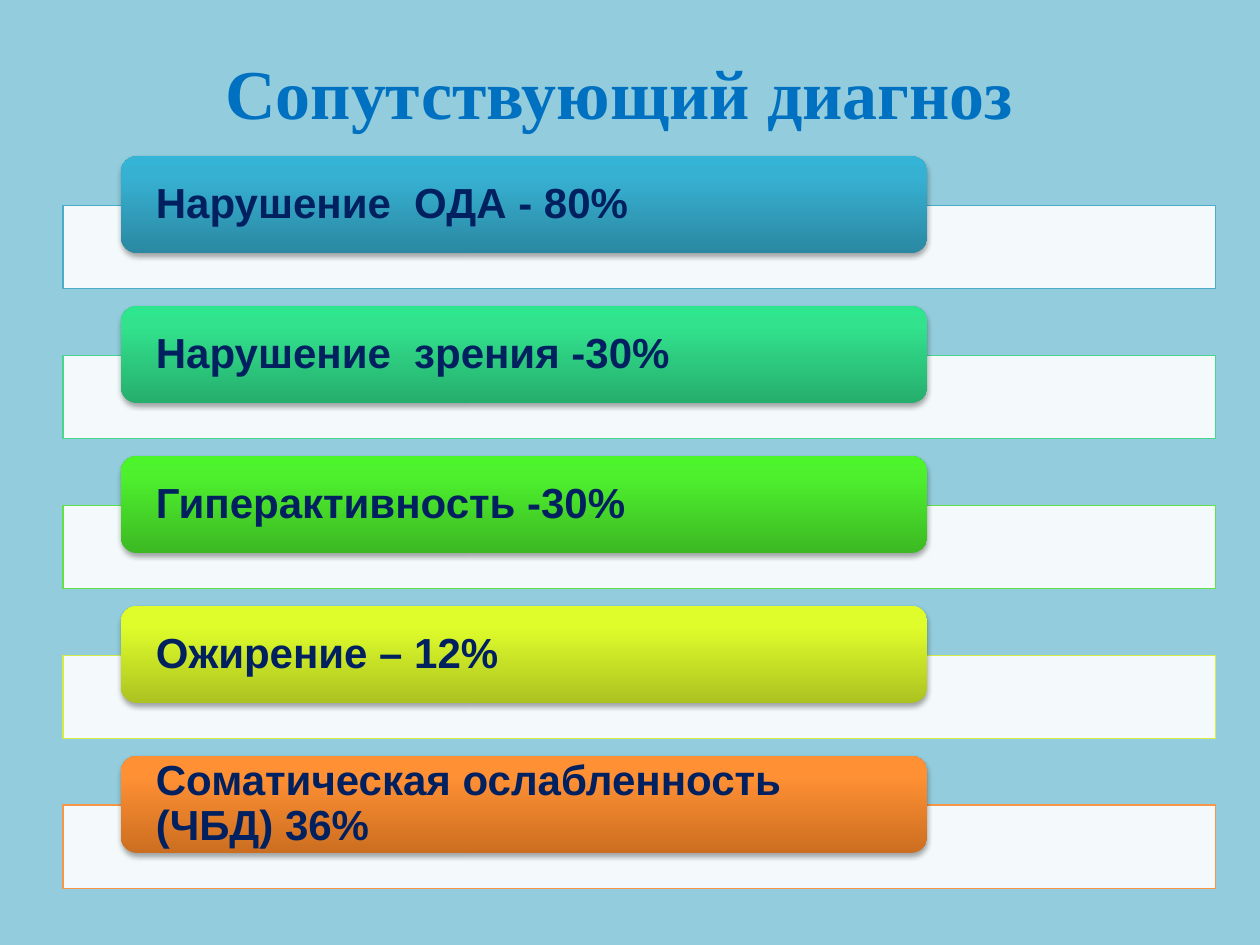
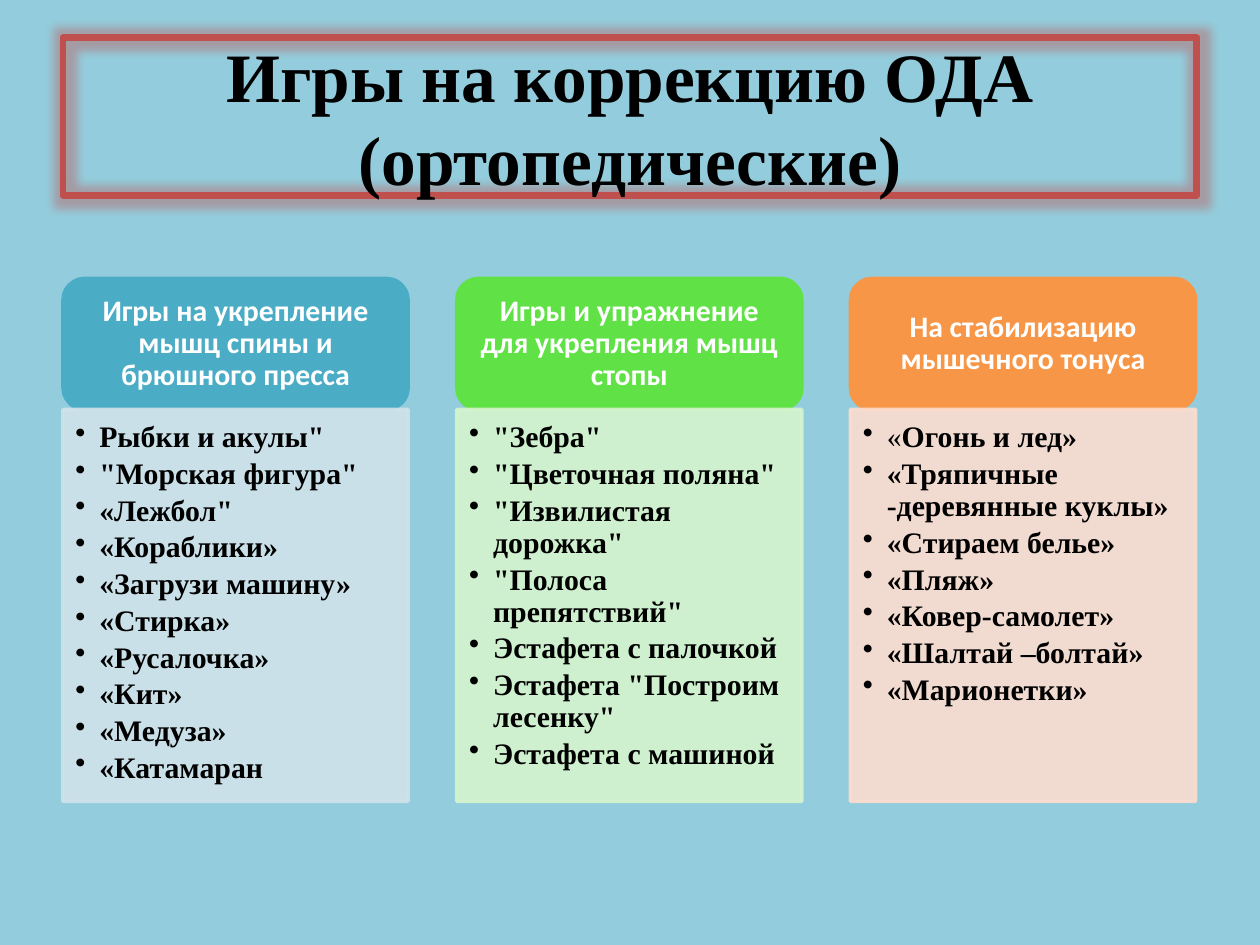
from copy import deepcopy
from dataclasses import dataclass

from lxml import etree
from pptx import Presentation
from pptx.dml.color import RGBColor
from pptx.enum.shapes import MSO_SHAPE
from pptx.enum.text import MSO_ANCHOR, MSO_AUTO_SIZE, PP_ALIGN
from pptx.oxml.ns import qn
from pptx.util import Emu, Pt

RECTANGLE, ROUNDED = MSO_SHAPE.RECTANGLE, MSO_SHAPE.ROUNDED_RECTANGLE
LEFT, CENTER = PP_ALIGN.LEFT, PP_ALIGN.CENTER
TOP, MIDDLE = MSO_ANCHOR.TOP, MSO_ANCHOR.MIDDLE
TITLE_ONLY = 5
EMU_PER_PX = 9144  # 100 px to the inch


@dataclass(frozen=True)
class Theme:
    background: str = "93CDDD"
    white: str = "FFFFFF"
    black: str = "000000"
    navy: str = "002060"
    title_blue: str = "0070C0"
    frame_red: str = "C0504D"
    serif: str = "Times New Roman"
    sans: str = "Arial"
    heading: str = "Calibri"
    title_size: float = 40
    framed_title_size: float = 39.6
    bar_size: float = 24
    column_size: float = 17


THEME = Theme()

# Text, outline colour, gradient from bottom to top
DIAGNOSES = [
    ("Нарушение  ОДА - 80%", "4BACC6", ("2A88A2", "37B1D2", "34B4D6")),
    ("Нарушение  зрения -30%", "48D491", ("26AE6D", "32E28D", "2EE68E")),
    ("Гиперактивность -30%", "60E146", ("3CB923", "4EF02E", "4CF52A")),
    ("Ожирение – 12%", "D5EC46", ("ACC321", "DFFD2B", "E1FF2B")),
    ("Соматическая ослабленность (ЧБД) 36%", "F79646",
     ("CC6E20", "FF9034", "FF9136")),
]

# Heading, heading colour, panel colour, games
GAME_COLUMNS = [
    ("Игры на укрепление мышц спины и брюшного пресса", "4BACC6", "D0E3EA",
     ['Рыбки и акулы"', '"Морская фигура"', '«Лежбол"', "«Кораблики»",
      "«Загрузи машину»", "«Стирка»", "«Русалочка»", "«Кит»", "«Медуза»",
      "«Катамаран"]),
    ("Игры и упражнение для укрепления мышц стопы", "60E146", "D6F4CE",
     ['"Зебра"', '"Цветочная поляна"', '"Извилистая дорожка"',
      '"Полоса препятствий"', "Эстафета с палочкой",
      'Эстафета "Построим лесенку"', "Эстафета с машиной"]),
    ("На стабилизацию мышечного тонуса", "F79646", "FCDDCF",
     ["«Огонь и лед»", "«Тряпичные -деревянные куклы»", "«Стираем белье»",
      "«Пляж»", "«Ковер-самолет»", "«Шалтай –болтай»", "«Марионетки»"]),
]


def px(length):
    return Emu(round(length * EMU_PER_PX))


def rgb(color):
    return RGBColor.from_string(color)


def add_effect(shape, kind, color, alpha, **attributes):
    effects = shape._element.spPr.find(qn("a:effectLst"))
    effect = etree.SubElement(effects, qn(f"a:{kind}"), attributes)
    color_node = etree.SubElement(effect, qn("a:srgbClr"), val=color)
    etree.SubElement(color_node, qn("a:alpha"), val=str(alpha * 1000))


def set_opacity(solid_fill, percent):
    etree.SubElement(solid_fill[0], qn("a:alpha"), val=str(percent * 1000))


def add_box(slide, kind, box, fill=None, line=None, line_width=0.75):
    shape = slide.shapes.add_shape(kind, *map(px, box))
    shape.shadow.inherit = False
    if fill:
        shape.fill.solid()
        shape.fill.fore_color.rgb = rgb(fill)
    if line:
        shape.line.color.rgb = rgb(line)
        shape.line.width = Pt(line_width)
    else:
        shape.line.fill.background()
    return shape


def fill_gradient(shape, colors):
    shape.fill.gradient()
    shape.fill.gradient_angle = 90
    stop_list = shape._element.spPr.find(qn("a:gradFill")).find(qn("a:gsLst"))
    stop_list.append(deepcopy(stop_list[-1]))
    for stop, color, position in zip(shape.fill.gradient_stops, colors, (0, 0.8, 1)):
        stop.color.rgb = rgb(color)
        stop.position = position


def set_text(shape, lines, font, size, color, align, anchor, insets, spacing=0.9):
    frame = shape.text_frame
    frame.text = "\n".join(lines)
    frame.word_wrap = True
    frame.auto_size = MSO_AUTO_SIZE.NONE
    frame.vertical_anchor = anchor
    (frame.margin_left, frame.margin_top,
     frame.margin_right, frame.margin_bottom) = map(px, insets)
    for paragraph in frame.paragraphs:
        paragraph.alignment = align
        paragraph.line_spacing = spacing
        for run in paragraph.runs:
            run.font.name = font
            run.font.size = Pt(size)
            run.font.bold = True
            run.font.color.rgb = rgb(color)


def add_bullets(shape, indent):
    for paragraph in shape.text_frame.paragraphs:
        paragraph.space_after = Pt(2.6)
        properties = paragraph._p.get_or_add_pPr()
        properties.set("marL", str(px(indent)))
        properties.set("indent", str(px(-indent)))
        etree.SubElement(properties, qn("a:buChar"), char="•")


def set_title(slide, text, box, size, color, spacing=1.0):
    title = slide.shapes.title
    title.left, title.top, title.width, title.height = map(px, box)
    set_text(title, [text], THEME.serif, size, color, CENTER, MIDDLE,
             (10, 5, 10, 5), spacing)
    return title


def add_diagnosis(slide, top, text, outline, gradient):
    strip = add_box(slide, RECTANGLE, (50, top + 39, 915, 66), THEME.white, outline)
    set_opacity(strip._element.spPr.find(qn("a:solidFill")), 90)
    bar = add_box(slide, ROUNDED, (96, top, 640, 77))
    fill_gradient(bar, gradient)
    add_effect(bar, "outerShdw", THEME.black, 35, blurRad="40000",
               dist="23000", dir="5400000", rotWithShape="0")
    set_text(bar, [text], THEME.sans, THEME.bar_size, THEME.navy, LEFT, MIDDLE,
             (24, 0, 24, 0))


def add_game_column(slide, left, heading, color, panel_color, games):
    width = 274
    header = add_box(slide, ROUNDED, (left, 221, width, 104), color, color, 2)
    set_text(header, [heading], THEME.heading, THEME.column_size, THEME.white,
             CENTER, MIDDLE, (13, 8, 13, 8))
    panel = add_box(slide, RECTANGLE, (left, 325, width, 311),
                    panel_color, panel_color, 2)
    for solid_fill in panel._element.spPr.iter(qn("a:solidFill")):
        set_opacity(solid_fill, 90)
    set_text(panel, games, THEME.serif, THEME.column_size, THEME.black,
             LEFT, TOP, (10, 10, 13, 15))
    add_bullets(panel, 19)
    return panel


def unbold_first_letter(paragraph):
    first = paragraph.runs[0]
    rest = deepcopy(first._r)
    first._r.addnext(rest)
    first.text, paragraph.runs[1].text = first.text[0], first.text[1:]
    first.font.bold = False


def build_diagnosis_slide(slide):
    set_title(slide, "Сопутствующий диагноз", (50, 30, 883, 85),
              THEME.title_size, THEME.title_blue)
    for index, diagnosis in enumerate(DIAGNOSES):
        add_diagnosis(slide, 124 + index * 119, *diagnosis)


def build_games_slide(slide):
    # Framed title with a red glow
    title = set_title(slide, "Игры на коррекцию ОДА (ортопедические)",
                      (50, 30, 900, 125), THEME.framed_title_size, THEME.black)
    title.line.color.rgb = rgb(THEME.frame_red)
    title.line.width = Pt(4)
    etree.SubElement(title.line._get_or_add_ln(), qn("a:round"))
    title.shadow.inherit = False
    add_effect(title, "glow", THEME.frame_red, 40, rad="139700")

    # Three columns of games
    panels = [add_game_column(slide, 50 + index * 312.5, *column)
              for index, column in enumerate(GAME_COLUMNS)]
    unbold_first_letter(panels[-1].text_frame.paragraphs[0])


def main():
    presentation = Presentation()
    presentation.slide_width, presentation.slide_height = px(1000), px(750)
    background = presentation.slide_master.background.fill
    background.solid()
    background.fore_color.rgb = rgb(THEME.background)
    layout = presentation.slide_layouts[TITLE_ONLY]
    for build in (build_diagnosis_slide, build_games_slide):
        build(presentation.slides.add_slide(layout))
    presentation.save("out.pptx")


if __name__ == "__main__":
    main()
